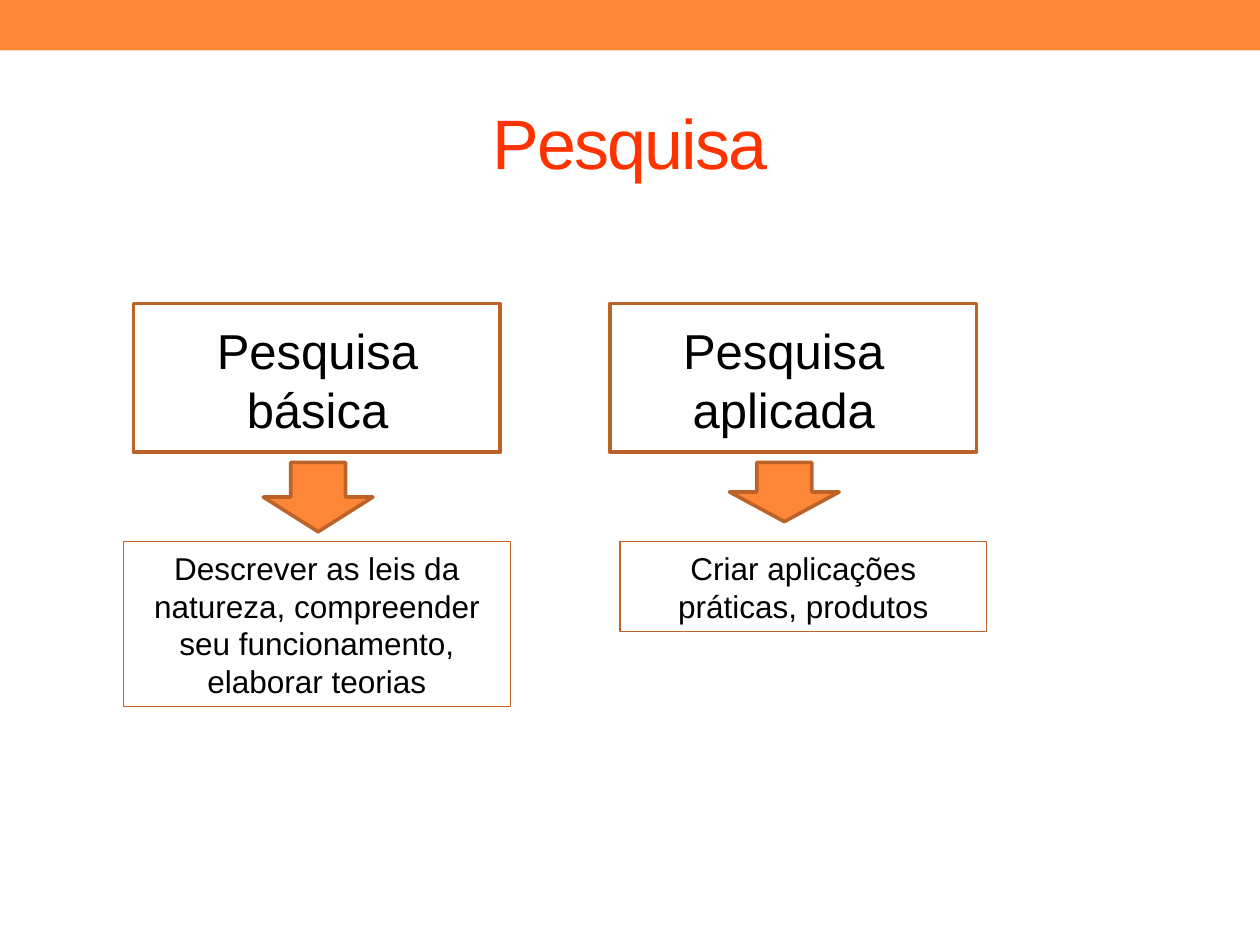
from dataclasses import dataclass

from pptx import Presentation
from pptx.dml.color import RGBColor
from pptx.enum.shapes import MSO_SHAPE
from pptx.enum.text import MSO_ANCHOR, PP_ALIGN
from pptx.util import Inches, Pt


@dataclass(frozen=True)
class Theme:
    font: str = "Arial"
    accent: RGBColor = RGBColor(0xFE, 0x86, 0x37)
    outline: RGBColor = RGBColor(0xBC, 0x63, 0x29)
    title: RGBColor = RGBColor(0xFF, 0x33, 0x00)
    text: RGBColor = RGBColor(0, 0, 0)
    title_size: float = 40
    heading_size: float = 28
    body_size: float = 18
    line_factor: float = 1.2
    thick: float = 2.08
    thin: float = 0.75


THEME = Theme()

# Boxes are left, top, width, height in inches
COLUMNS = [
    {
        "heading": ["Pesquisa", "básica"],
        "description": "Descrever as leis da natureza, compreender "
                       "seu funcionamento, elaborar teorias",
        "frame": (1.06, 2.41, 2.91, 1.18),
        "label": (1.3, 2.49, 2.44, 1.04),
        "arrow": (2.09, 3.67, 0.87, 0.55),
        "details": (0.98, 4.3, 3.07, 1.31),
    },
    {
        "heading": ["Pesquisa", "aplicada"],
        "description": "Criar aplicações práticas, produtos",
        "frame": (4.84, 2.41, 2.91, 1.18),
        "label": (5, 2.49, 2.44, 1.04),
        "arrow": (5.79, 3.67, 0.87, 0.47),
        "details": (4.92, 4.3, 2.91, 0.71),
    },
]


def inches(box):
    return [Inches(value) for value in box]


def add_box(slide, kind, box, fill=None, line_width=None):
    shape = slide.shapes.add_shape(kind, *inches(box))
    shape.shadow.inherit = False
    if fill is None:
        shape.fill.background()
    else:
        shape.fill.solid()
        shape.fill.fore_color.rgb = fill
    if line_width is None:
        shape.line.fill.background()
    else:
        shape.line.color.rgb = THEME.outline
        shape.line.width = Pt(line_width)
    return shape


def write_text(shape, lines, size, color, line_spacing=None):
    frame = shape.text_frame
    frame.word_wrap = True
    frame.vertical_anchor = MSO_ANCHOR.MIDDLE
    frame.text = "\n".join(lines)
    for paragraph in frame.paragraphs:
        paragraph.alignment = PP_ALIGN.CENTER
        paragraph.line_spacing = line_spacing
        font = paragraph.runs[0].font
        for name, value in {"name": THEME.font, "size": Pt(size)}.items():
            setattr(font, name, value)
        font.color.rgb = color


def add_header(slide, bar_box, title_box):
    add_box(slide, MSO_SHAPE.RECTANGLE, bar_box, fill=THEME.accent)
    title = slide.shapes.title
    title.left, title.top, title.width, title.height = inches(title_box)
    write_text(title, ["Pesquisa"], THEME.title_size, THEME.title)
    # Letter spacing of -1 pt
    run = title.text_frame.paragraphs[0].runs[0]
    run.font._element.set("spc", "-100")


def add_column(slide, column):
    # Heading frame and its label
    add_box(slide, MSO_SHAPE.RECTANGLE, column["frame"], line_width=THEME.thick)
    label = slide.shapes.add_textbox(*inches(column["label"]))
    write_text(label, column["heading"], THEME.heading_size, THEME.text,
               Pt(THEME.heading_size * THEME.line_factor))

    # Description
    details = add_box(slide, MSO_SHAPE.RECTANGLE, column["details"],
                      line_width=THEME.thin)
    write_text(details, [column["description"]], THEME.body_size, THEME.text,
               Pt(THEME.body_size * THEME.line_factor))

    # Arrow from heading to description
    add_box(slide, MSO_SHAPE.DOWN_ARROW, column["arrow"],
            fill=THEME.accent, line_width=THEME.thick)


def main():
    presentation = Presentation()
    presentation.slide_width = Inches(10)
    presentation.slide_height = Inches(7.5)
    slide = presentation.slides.add_slide(presentation.slide_layouts[5])
    add_header(slide, (0, 0, 10, 0.4), (0.5, 0.58, 9, 1.08))
    for column in COLUMNS:
        add_column(slide, column)
    presentation.save("out.pptx")


if __name__ == "__main__":
    main()
